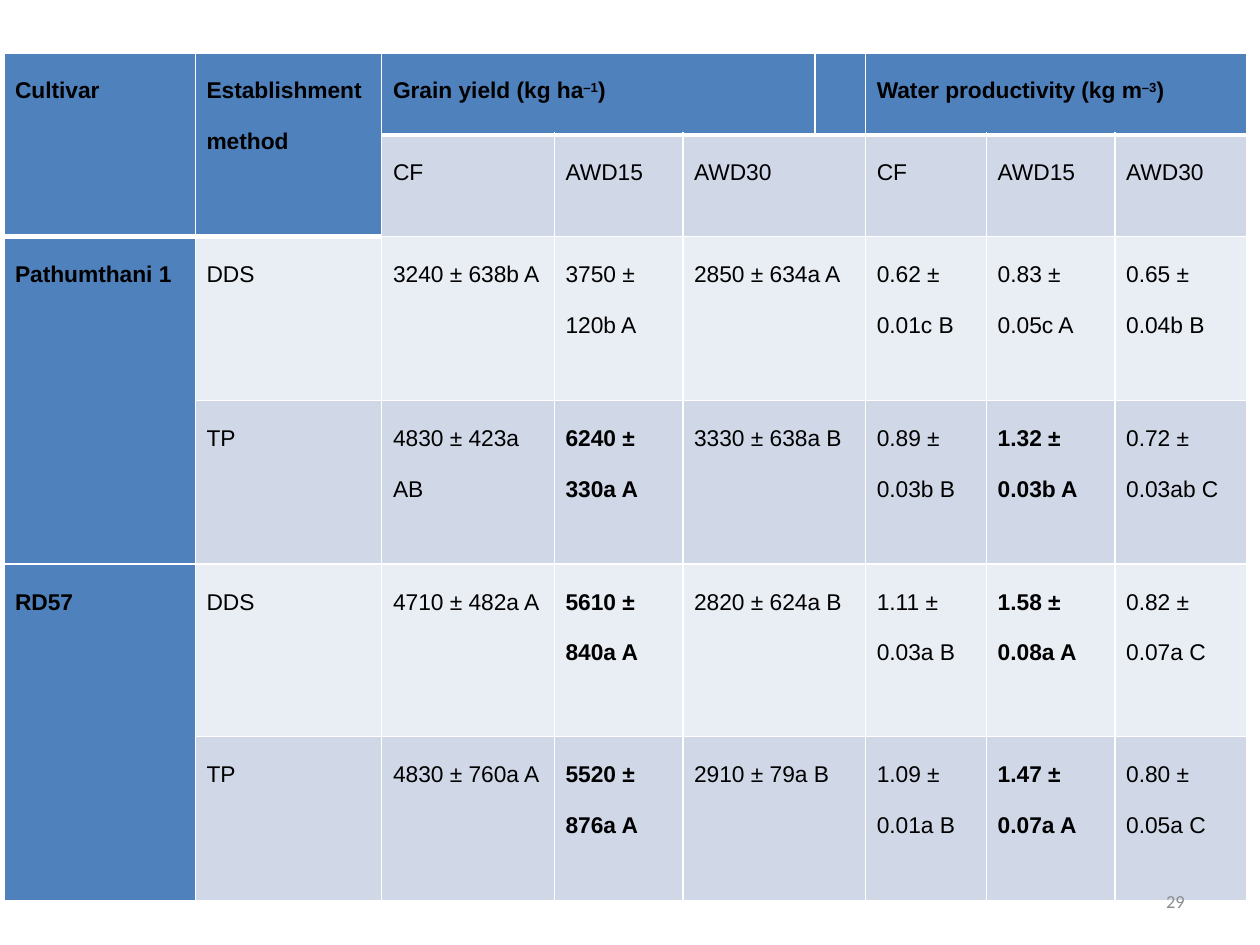
from dataclasses import dataclass

from lxml import etree
from pptx import Presentation
from pptx import util as u
from pptx.dml.color import RGBColor
from pptx.enum import text
from pptx.oxml import ns

HEADER_BLUE = RGBColor(0x4F, 0x81, 0xBD)
BAND_DARK = RGBColor(0xD0, 0xD8, 0xE8)
BAND_LIGHT = RGBColor(0xE9, 0xED, 0xF4)
BLACK = RGBColor(0, 0, 0)
WHITE = RGBColor(0xFF, 0xFF, 0xFF)
GREY = RGBColor(0x8C, 0x8C, 0x8C)

COLUMN_WIDTHS = (1.52, 1.48, 1.37, 1.02, 1.05, 0.4, 0.96, 1.02, 1.05)
ROW_HEIGHTS = (0.65, 0.65, 1.3, 1.3, 1.37, 1.3)
THIN, THICK = 1, 3


@dataclass(frozen=True)
class Entry:
    """Cell content; carets enclose a superscript."""
    row: int
    column: int
    words: str
    bold: bool = False
    rows: int = 1
    columns: int = 1


@dataclass(frozen=True)
class Trial:
    method: str
    values: tuple[str, ...]
    best: tuple[int, ...] = ()


# Headings and cultivars
HEADINGS = (
    Entry(0, 0, "Cultivar", True, rows=2),
    Entry(0, 1, "Establishment method", True, rows=2),
    Entry(0, 2, "Grain yield (kg ha^–1^)", True, columns=3),
    Entry(0, 6, "Water productivity (kg m^–3^)", True, columns=3),
    Entry(2, 0, "Pathumthani 1", True, rows=2),
    Entry(4, 0, "RD57", True, rows=2),
)

# Column of each measured value, and how many columns it covers
VALUE_COLUMNS = ((2, 1), (3, 1), (4, 2), (6, 1), (7, 1), (8, 1))
AWD15 = (1, 4)
REGIMES = ("CF", "AWD15", "AWD30") * 2
TRIALS = (
    Trial("DDS", ("3240 ± 638b A", "3750 ± 120b A", "2850 ± 634a A",
                  "0.62 ± 0.01c B", "0.83 ± 0.05c A", "0.65 ± 0.04b B")),
    Trial("TP", ("4830 ± 423a AB", "6240 ± 330a A", "3330 ± 638a B",
                 "0.89 ± 0.03b B", "1.32 ± 0.03b A", "0.72 ± 0.03ab C"), AWD15),
    Trial("DDS", ("4710 ± 482a A", "5610 ± 840a A", "2820 ± 624a B",
                  "1.11 ± 0.03a B", "1.58 ± 0.08a A", "0.82 ± 0.07a C"), AWD15),
    Trial("TP", ("4830 ± 760a A", "5520 ± 876a A", "2910 ± 79a B",
                 "1.09 ± 0.01a B", "1.47 ± 0.07a A", "0.80 ± 0.05a C"), AWD15),
)


def apply_format(target, values: dict) -> None:
    for name, value in values.items():
        setattr(target, name, value)


def value_entries(row: int, values: tuple[str, ...],
                  best: tuple[int, ...] = ()) -> list[Entry]:
    return [Entry(row, column, words, index in best, columns=span)
            for index, (words, (column, span)) in enumerate(zip(values, VALUE_COLUMNS))]


def set_borders(cell, row: int, column: int) -> None:
    # A thick rule closes the header, one row lower under the first two columns
    last_header_row = 1 if column < 2 else 0
    widths = {
        "lnL": THIN,
        "lnR": THIN,
        "lnT": THICK if row == last_header_row + 1 else THIN,
        "lnB": THICK if row <= last_header_row else THIN,
    }
    properties = cell._tc.get_or_add_tcPr()
    for tag, width in widths.items():
        line = etree.SubElement(properties, ns.qn(f"a:{tag}"), w=str(u.Pt(width)))
        fill = etree.SubElement(line, ns.qn("a:solidFill"))
        etree.SubElement(fill, ns.qn("a:srgbClr"), val=str(WHITE))


def fill_colour(row: int, column: int) -> RGBColor:
    if row == 0 or column == 0 or (row == 1 and column == 1):
        return HEADER_BLUE
    return BAND_DARK if row % 2 else BAND_LIGHT


def write_entry(table, entry: Entry) -> None:
    cell = table.cell(entry.row, entry.column)
    if entry.rows * entry.columns > 1:
        cell.merge(table.cell(entry.row + entry.rows - 1,
                              entry.column + entry.columns - 1))
    paragraph = cell.text_frame.paragraphs[0]
    paragraph.line_spacing = 2.0
    for index, part in enumerate(entry.words.split("^")):
        if not part:
            continue
        run = paragraph.add_run()
        run.text = part
        apply_format(run.font, {"name": "Arial", "size": u.Pt(13), "bold": entry.bold})
        run.font.color.rgb = BLACK
        if index % 2:
            run.font._element.set("baseline", "30000")


def add_results_table(slide) -> None:
    frame = slide.shapes.add_table(
        len(ROW_HEIGHTS), len(COLUMN_WIDTHS), u.Inches(0.03), u.Inches(0.42),
        u.Inches(sum(COLUMN_WIDTHS)), u.Inches(sum(ROW_HEIGHTS)))
    table = frame.table
    apply_format(table, {"first_row": False, "horz_banding": False})
    for column, width in zip(table.columns, COLUMN_WIDTHS):
        column.width = u.Inches(width)
    for row, height in zip(table.rows, ROW_HEIGHTS):
        row.height = u.Inches(height)

    # Fills, borders and margins
    margins = {"margin_left": u.Inches(0.09), "margin_right": u.Inches(0.09),
               "margin_top": 0, "margin_bottom": 0}
    for row in range(len(ROW_HEIGHTS)):
        for column in range(len(COLUMN_WIDTHS)):
            cell = table.cell(row, column)
            apply_format(cell, margins)
            set_borders(cell, row, column)
            cell.fill.solid()
            cell.fill.fore_color.rgb = fill_colour(row, column)

    # Wording
    entries = [*HEADINGS, *value_entries(1, REGIMES)]
    for row, trial in enumerate(TRIALS, start=2):
        entries.append(Entry(row, 1, trial.method))
        entries += value_entries(row, trial.values, trial.best)
    for entry in entries:
        write_entry(table, entry)


def add_page_number(slide, number: str) -> None:
    box = slide.shapes.add_textbox(u.Inches(7.17), u.Inches(6.95),
                                   u.Inches(2.33), u.Inches(0.4))
    apply_format(box.text_frame, {"word_wrap": True,
                                  "vertical_anchor": text.MSO_ANCHOR.MIDDLE})
    paragraph = box.text_frame.paragraphs[0]
    paragraph.alignment = text.PP_ALIGN.RIGHT
    run = paragraph.add_run()
    run.text = number
    apply_format(run.font, {"name": "Calibri", "size": u.Pt(10.5)})
    run.font.color.rgb = GREY


def main() -> None:
    presentation = Presentation()
    apply_format(presentation, {"slide_width": u.Inches(10),
                                "slide_height": u.Inches(7.5)})
    slide = presentation.slides.add_slide(presentation.slide_layouts[6])
    add_results_table(slide)
    # The number lies over the table's lower edge, so it stays readable
    add_page_number(slide, "29")
    presentation.save("out.pptx")


if __name__ == "__main__":
    main()
